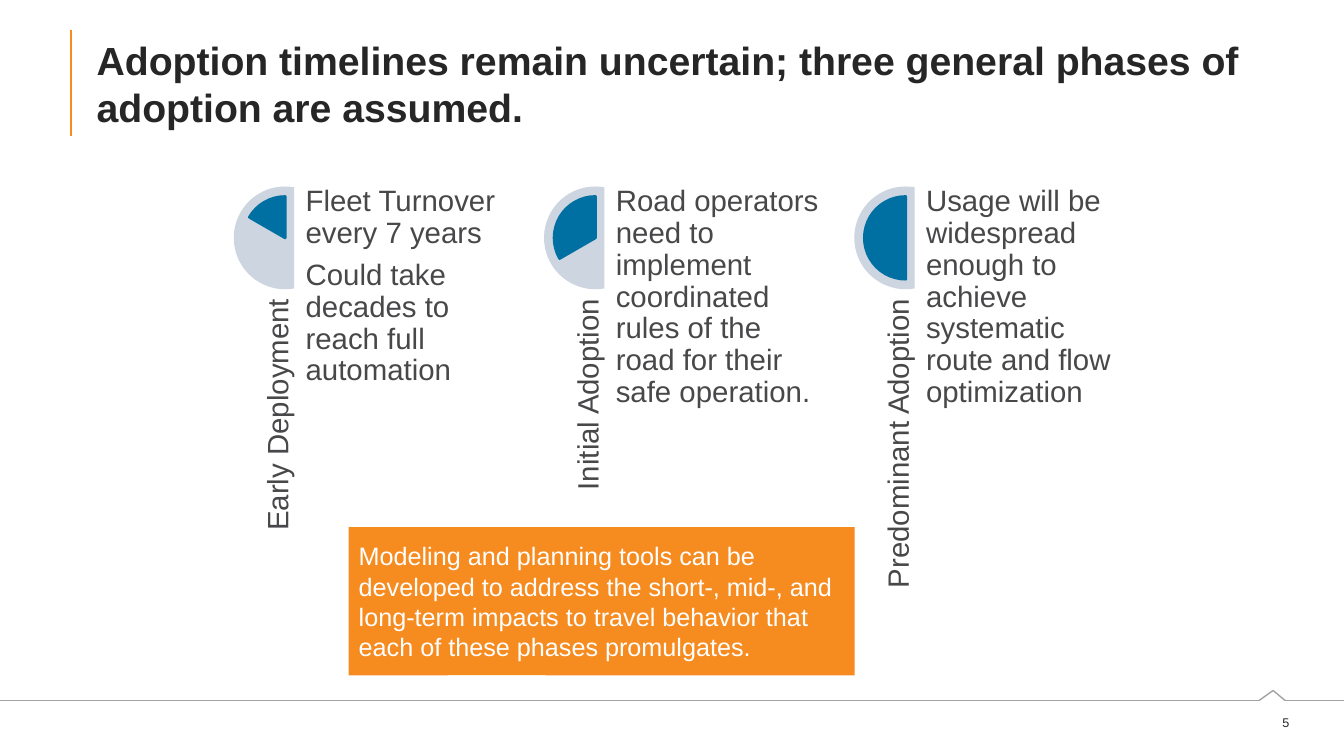
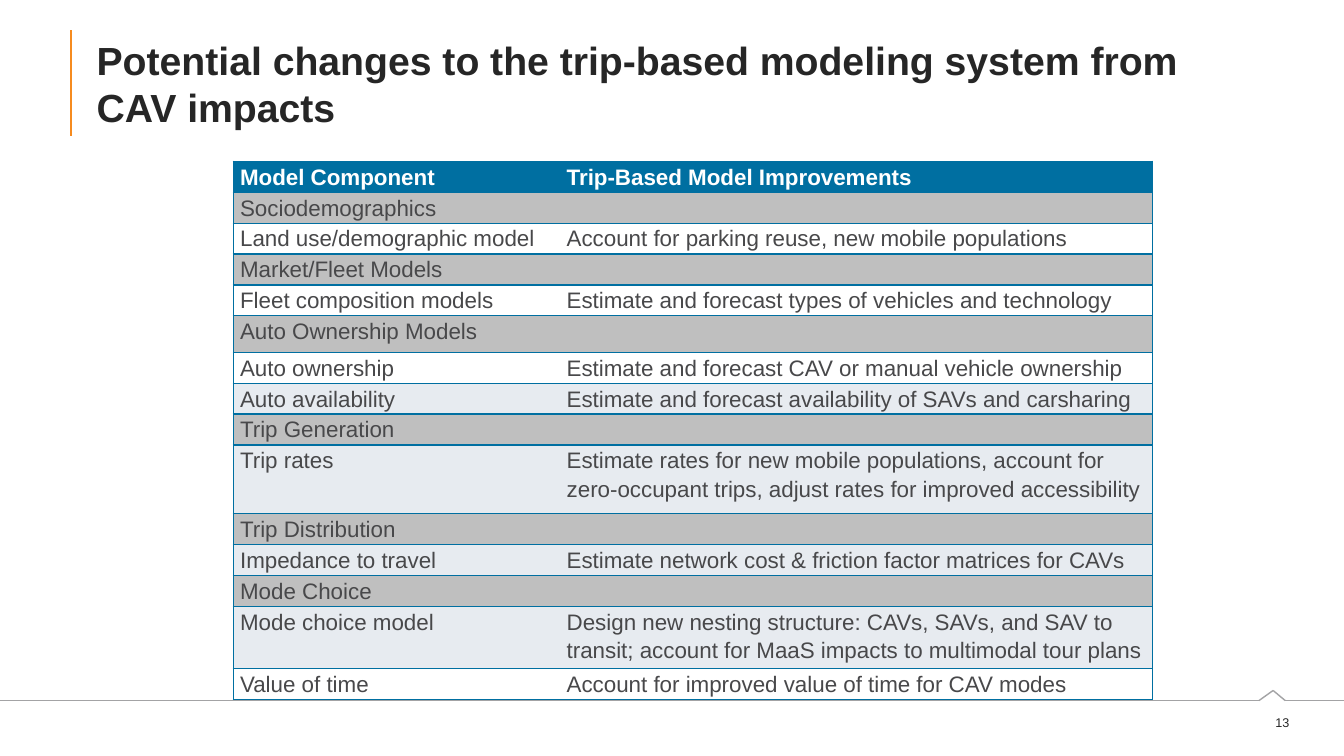
from itertools import pairwise

from lxml.etree import SubElement
from pptx import Presentation
from pptx.dml.color import RGBColor
from pptx.enum.shapes import MSO_CONNECTOR as Connector, MSO_SHAPE as Shape
from pptx.enum.text import MSO_ANCHOR as Anchor, PP_ALIGN as Align
from pptx.oxml.ns import qn
from pptx.util import Pt

FONT = "Arial"
ORANGE, BLUE, PALE_BLUE = "F68B1F", "006FA1", "CCD5E0"
INK, BODY, RULE_GRAY, WHITE = "262626", "48484A", "A3A3A5", "FFFFFF"
GROUP_GRAY, BAND = "BFBFBF", "E7EBF0"
SLIDE_WIDTH, SLIDE_HEIGHT = 960, 540
FOOTER_RULE = [(0, 500.4), (899.3, 500.4), (909.4, 493.2), (918, 500.4), (SLIDE_WIDTH, 500.4)]

PHASE_LEFT, PHASE_TOP, PHASE_PITCH = 167, 133.2, 221.6
DIAL, WEDGE = 73.4, 59
PHASES = [
    ("Early Deployment", 126, ["Fleet Turnover every 7 years",
                               "Could take decades to reach full automation"]),
    ("Initial Adoption", 90, ["Road operators need to implement coordinated rules of the road "
                              "for their safe operation."]),
    ("Predominant Adoption", 54, ["Usage will be widespread enough to achieve systematic route "
                                  "and flow optimization"]),
]

ROW_HEIGHT = 21.6
TALL_ROWS = {5: 26, 9: 49, 13: 44.6}
MODEL_ROWS = [
    ("Model Component", "Trip-Based Model Improvements"),
    ("Sociodemographics",),
    ("Land use/demographic model", "Account for parking reuse, new mobile populations"),
    ("Market/Fleet Models",),
    ("Fleet composition models", "Estimate and forecast types of vehicles and technology"),
    ("Auto Ownership Models",),
    ("Auto ownership", "Estimate and forecast CAV or manual vehicle ownership"),
    ("Auto availability", "Estimate and forecast availability of SAVs and carsharing"),
    ("Trip Generation",),
    ("Trip rates", "Estimate rates for new mobile populations, account for zero-occupant trips, "
                   "adjust rates for improved accessibility"),
    ("Trip Distribution",),
    ("Impedance to travel", "Estimate network cost & friction factor matrices for CAVs"),
    ("Mode Choice",),
    ("Mode choice model", "Design new nesting structure: CAVs, SAVs, and SAV to transit; "
                          "account for MaaS impacts to multimodal tour plans"),
    ("Value of time", "Account for improved value of time for CAV modes"),
]


def color(hex_string):
    return RGBColor.from_string(hex_string)


def points(*lengths):
    return [Pt(length) for length in lengths]


def write(frame, texts, size, ink, bold=False, align=Align.LEFT, spacing=None, after=None):
    for index, text in enumerate(texts):
        paragraph = frame.add_paragraph() if index else frame.paragraphs[0]
        paragraph.text = text
        paragraph.alignment = align
        if spacing:
            paragraph.line_spacing = spacing
        if after is not None:
            paragraph.space_after = Pt(after)
        font = paragraph.font
        font.name, font.size, font.bold = FONT, Pt(size), bold
        font.color.rgb = color(ink)


def add_text(slide, box, texts, size, ink, anchor=Anchor.TOP, inset=True, **style):
    label = slide.shapes.add_textbox(*points(*box))
    frame = label.text_frame
    frame.word_wrap = True
    frame.vertical_anchor = anchor
    if not inset:
        frame.margin_left = frame.margin_right = frame.margin_top = frame.margin_bottom = 0
    write(frame, texts, size, ink, **style)
    return label


def add_line(slide, start, end, ink, width):
    line = slide.shapes.add_connector(Connector.STRAIGHT, *points(*start, *end))
    line.line.color.rgb = color(ink)
    line.line.width = Pt(width)
    SubElement(line._element.spPr, qn("a:effectLst"))


def add_figure(slide, preset, box, fill, adjustments, outline=None):
    figure = slide.shapes.add_shape(preset, *points(*box))
    figure.shadow.inherit = False
    figure.fill.solid()
    figure.fill.fore_color.rgb = color(fill)
    if outline:
        figure.line.color.rgb = color(fill)
        figure.line.width = Pt(outline)
    else:
        figure.line.fill.background()
    for index, value in enumerate(adjustments):
        figure.adjustments[index] = value
    return figure


def add_slide(deck, title, number):
    slide = deck.slides.add_slide(deck.slide_layouts[6])
    add_line(slide, (50.4, 21.6), (50.4, 97.2), ORANGE, 1.5)
    for start, end in pairwise(FOOTER_RULE):
        add_line(slide, start, end, RULE_GRAY, 1)
    add_text(slide, (887.8, 506.9, 40.3, 18), [number], 9, INK, Anchor.MIDDLE, align=Align.RIGHT)
    add_text(slide, (62, 21.6, 849.6, 75.6), [title], 28, INK, Anchor.MIDDLE, bold=True)
    return slide


def add_phase(slide, left, name, wedge_start, notes):
    margin = (DIAL - WEDGE) / 2
    add_figure(slide, Shape.CHORD, (left, PHASE_TOP, DIAL, DIAL), PALE_BLUE, (48, 168))
    add_figure(slide, Shape.PIE, (left + margin, PHASE_TOP + margin, WEDGE, WEDGE),
               BLUE, (wedge_start, 162), outline=2)
    style = {"inset": False, "spacing": 0.9, "after": 7.35}
    label = add_text(slide, (left - 85, 298, 213, 44), [name], 21, BODY, Anchor.BOTTOM,
                     align=Align.RIGHT, **style)
    label.rotation = 270
    add_text(slide, (left + 51.3, PHASE_TOP, 147, 294), notes, 21, BODY, **style)


def add_callout(slide, box, text):
    callout = add_figure(slide, Shape.RECTANGULAR_CALLOUT, box, ORANGE, (-0.205, 0.498))
    callout.text_frame.word_wrap = True
    callout.text_frame.vertical_anchor = Anchor.MIDDLE
    write(callout.text_frame, [text], 18, WHITE)


def set_borders(cell, sides):
    properties = cell._tc.get_or_add_tcPr()
    for side in "LRTB":
        border = SubElement(properties, qn(f"a:ln{side}"), w=str(Pt(1)))
        if side in sides:
            paint = SubElement(border, qn("a:solidFill"))
            SubElement(paint, qn("a:srgbClr"), val=BLUE)
        else:
            SubElement(border, qn("a:noFill"))


def row_fill(index, is_group):
    if index == 0:
        return BLUE
    if is_group:
        return GROUP_GRAY
    return BAND if index % 2 else WHITE


def add_model_table(slide, left, top, widths):
    heights = [TALL_ROWS.get(index, ROW_HEIGHT) for index in range(len(MODEL_ROWS))]
    box = points(left, top, sum(widths), sum(heights))
    table = slide.shapes.add_table(len(heights), len(widths), *box).table
    for column, width in zip(table.columns, widths):
        column.width = Pt(width)
    for index, (texts, height) in enumerate(zip(MODEL_ROWS, heights)):
        table.rows[index].height = Pt(height)
        is_group = len(texts) == 1
        cells = [table.cell(index, column) for column in range(len(widths))]
        if is_group:
            cells[0].merge(cells[-1])
        for cell, sides in zip(cells, ("LTB", "RTB")):
            set_borders(cell, "LRTB" if is_group else sides)
            cell.fill.solid()
            cell.fill.fore_color.rgb = color(row_fill(index, is_group))
            cell.margin_left = cell.margin_right = Pt(5)
            cell.margin_top = cell.margin_bottom = 0
        for cell, text in zip(cells, texts):
            write(cell.text_frame, [text], 16, BODY if index else WHITE,
                  bold=index == 0, spacing=1.15)


def main():
    deck = Presentation()
    deck.slide_width, deck.slide_height = points(SLIDE_WIDTH, SLIDE_HEIGHT)

    adoption = add_slide(deck, "Adoption timelines remain uncertain; three general phases of "
                               "adoption are assumed.", "5")
    for index, phase in enumerate(PHASES):
        add_phase(adoption, PHASE_LEFT + index * PHASE_PITCH, *phase)
    add_callout(adoption, (249.1, 376.6, 361.4, 105.8),
                "Modeling and planning tools can be developed to address the short-, mid-, and "
                "long-term impacts to travel behavior that each of these phases promulgates.")

    changes = add_slide(deck, "Potential changes to the trip-based modeling system from "
                              "CAV impacts", "13")
    add_model_table(changes, 166.5, 115.2, (233.3, 423.4))

    deck.save("out.pptx")


if __name__ == "__main__":
    main()
